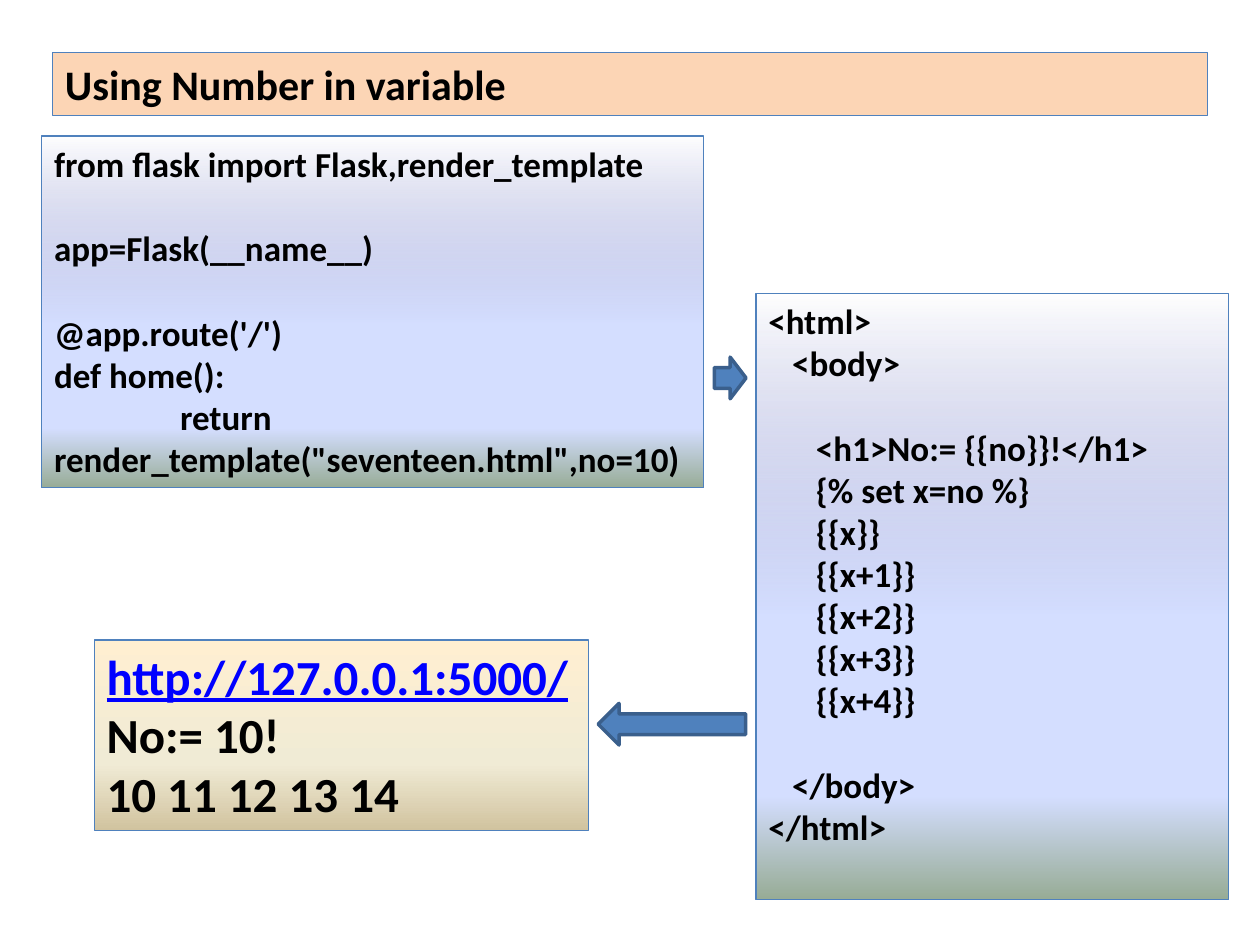
from pptx import Presentation
from pptx.dml.color import RGBColor as RGB
from pptx.enum.shapes import MSO_SHAPE as Kind
from pptx.enum.text import MSO_ANCHOR as Anchor, MSO_AUTO_SIZE as Fit, PP_ALIGN as Align
from pptx.oxml.ns import qn
from pptx.util import Cm, Pt
from lxml.etree import SubElement as Sub

BLACK, LINK = RGB(0, 0, 0), RGB(0, 0, 255)
BLUE, NAVY = RGB(0x4F, 0x81, 0xBD), RGB(0x3A, 0x5F, 0x8C)
PEACH = RGB(0xFC, 0xD5, 0xB5)
MIST = [(0, RGB(0x84, 0x88, 0xC4), 0), (53, RGB(0xD4, 0xDE, 0xFF), 100),
        (83, RGB(0xD4, 0xDE, 0xFF), 100), (100, RGB(0x96, 0xAB, 0x94), 100)]
SAND = [(0, RGB(0xFF, 0xEF, 0xD1), 100), (65, RGB(0xF0, 0xEB, 0xD5), 100),
        (100, RGB(0xD1, 0xC3, 0x9F), 100)]

STEP, TAB, GAP = Cm(0.48), Cm(2.54), Pt(24.4)

CODE = [
    ("from flask import Flask,render_template", {}),
    ("app=Flask(__name__)", {"gap": GAP}),
    ("@app.route('/')", {"gap": GAP}),
    ("def home():", {}),
    ('return render_template("seventeen.html",no=10)', {"indent": TAB}),
]
PAGE = [
    ("<html>", {}),
    ("<body>", {"marL": STEP}),
    ("<h1>No:= {{no}}!</h1>", {"marL": 2 * STEP, "gap": GAP}),
    ("{% set x=no %}", {"marL": 2 * STEP}),
    ("{{x}}", {"marL": 2 * STEP}),
    *[("{{x+%d}}" % n, {"marL": 2 * STEP}) for n in range(1, 5)],
    ("</body>", {"marL": STEP, "gap": GAP}),
    ("</html>", {}),
]
RESULT = [
    ("http://127.0.0.1:5000/", {"font": {"underline": True, "color": LINK}}),
    ("No:= 10!", {}),
    ("10 11 12 13 14", {}),
]
TITLE = [("Using Number in variable", {})]

BOXES = [
    ((0.84, 2.74, 13.34, 7.09), MIST, CODE, 20, True),
    ((15.24, 5.92, 9.53, 12.22), MIST, PAGE, 20, True),
    ((1.9, 12.9, 9.96, 3.84), SAND, RESULT, 28, False),
    ((1.06, 1.06, 23.28, 1.27), PEACH, TITLE, 24, True),
]
ARROWS = [
    (Kind.RIGHT_ARROW, (14.4, 7.2, 0.64, 0.84)),
    (Kind.LEFT_ARROW, (12.06, 14.18, 2.97, 0.84)),
]


def blend(shape, stops):
    grad = shape._element.spPr.makeelement(qn("a:gradFill"), {"rotWithShape": "1"})
    steps = Sub(grad, qn("a:gsLst"))
    for pos, tone, alpha in stops:
        stop = Sub(steps, qn("a:gs"), pos=str(pos * 1000))
        color = Sub(stop, qn("a:srgbClr"), val=str(tone))
        if alpha < 100:
            Sub(color, qn("a:alpha"), val=str(alpha * 1000))
    Sub(grad, qn("a:lin"), ang="5400000", scaled="0")
    shape._element.spPr.find(qn("a:prstGeom")).addnext(grad)


def draw(kind, place, fill, edge, width):
    shape = slide.shapes.add_shape(kind, *map(Cm, place))
    shape.shadow.inherit = False
    shape.line.color.rgb = edge
    shape.line.width = Pt(width)
    if isinstance(fill, list):
        blend(shape, fill)
    else:
        shape.fill.solid()
        shape.fill.fore_color.rgb = fill
    return shape


def write(shape, lines, size, wrap):
    frame = shape.text_frame
    for key, val in {"word_wrap": wrap, "auto_size": Fit.NONE,
                     "vertical_anchor": Anchor.TOP}.items():
        setattr(frame, key, val)
    for i, (text, form) in enumerate(lines):
        para = frame.paragraphs[0] if i == 0 else frame.add_paragraph()
        para.alignment = Align.LEFT
        para.space_before = form.get("gap", Pt(0))
        for key in ("marL", "indent"):
            if key in form:
                para._p.get_or_add_pPr().set(key, str(int(form[key])))
        run = para.add_run()
        run.text = text
        look = {"name": "Calibri", "size": Pt(size), "bold": True,
                "color": BLACK, **form.get("font", {})}
        run.font.color.rgb = look.pop("color")
        for key, val in look.items():
            setattr(run.font, key, val)


deck = Presentation()
deck.slide_width, deck.slide_height = Cm(25.4), Cm(19.05)
slide = deck.slides.add_slide(deck.slide_layouts[6])

for place, fill, lines, size, wrap in BOXES:
    write(draw(Kind.RECTANGLE, place, fill, BLUE, 0.75), lines, size, wrap)
for kind, place in ARROWS:
    draw(kind, place, BLUE, NAVY, 2)

deck.save("out.pptx")
